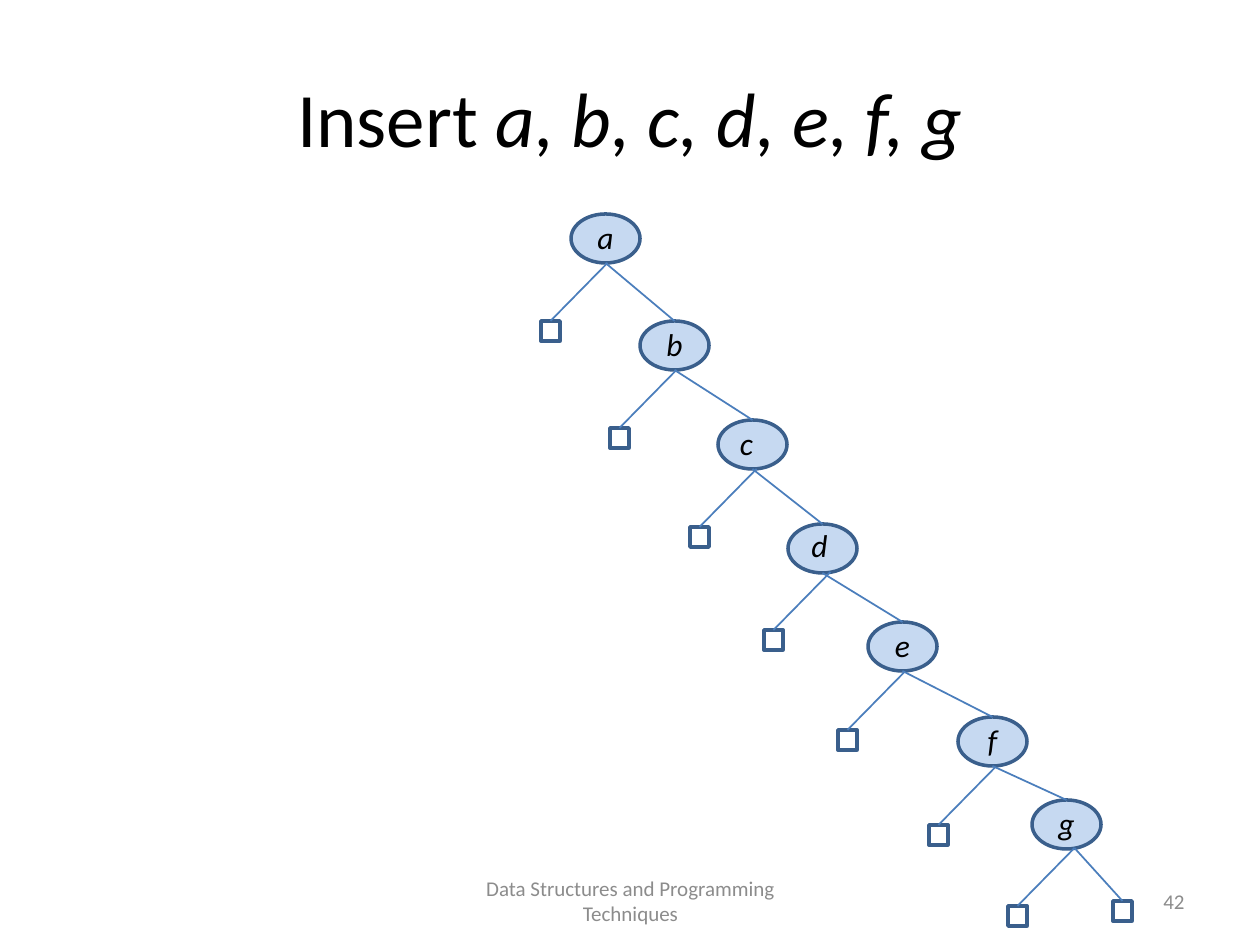
"""Build a slide showing a degenerate binary search tree."""
import pptx
import pptx.util
import pptx.dml.color
import pptx.enum.shapes
import pptx.enum.text
import pptx.oxml.ns
import lxml.etree

SHAPE = pptx.enum.shapes.MSO_SHAPE
ALIGN = pptx.enum.text.PP_ALIGN
ANCHOR = pptx.enum.text.MSO_ANCHOR
SCALE = 914400 / 126

TITLE = [("Insert ", False), ("a, b, c, d, e, f, g", True)]
FOOTER = "Data Structures and Programming Techniques"
NUMBER = "42"
NODES = [
    ("a", 571, 214), ("b", 640, 321), ("c", 718, 420), ("d", 788, 524),
    ("e", 868, 622), ("f", 958, 717), ("g", 1032, 800),
]
NUDGE = {"c": (-6, 0), "d": (-3, -2)}
LEAVES = [
    (541, 321), (610, 428), (690, 527), (764, 630),
    (838, 730), (929, 825), (1008, 906),
]
LAST = (1113, 901)
NODE_W, NODE_H = 69, 49
LEAF_W, LEAF_H = 19, 20
RUN, RISE = 57, 58
EDGE, LINK, FILL = "3A5F8C", "4B7EBC", "C6D9F1"
BLACK, GRAY = "000000", "8C8C8C"


def emu(*sizes):
    return [round(size * SCALE) for size in sizes]


def color(code):
    return pptx.dml.color.RGBColor.from_string(code)


def write(slide, box, runs, size, tint, align=ALIGN.CENTER, anchor=ANCHOR.MIDDLE):
    frame = slide.shapes.add_textbox(*emu(*box)).text_frame
    frame.word_wrap = True
    frame.vertical_anchor = anchor
    para = frame.paragraphs[0]
    para.alignment = align
    for text, slant in runs:
        run = para.add_run()
        run.text = text
        run.font.name = "Calibri"
        run.font.size = pptx.util.Pt(size)
        run.font.italic = slant
        run.font.color.rgb = color(tint)


def draw(slide, kind, box, fill=None):
    shape = slide.shapes.add_shape(kind, *emu(*box))
    shape.shadow.inherit = False
    if fill:
        shape.fill.solid()
        shape.fill.fore_color.rgb = color(fill)
    else:
        shape.fill.background()
    shape.line.color.rgb = color(EDGE)
    shape.line.width = pptx.util.Pt(2)
    return shape


def join(slide, start, child):
    kind = pptx.enum.shapes.MSO_CONNECTOR.STRAIGHT
    line = slide.shapes.add_connector(kind, *emu(*start, *start))
    line.end_connect(child, 0)
    line.line.color.rgb = color(LINK)
    line.line.width = pptx.util.Pt(1)
    props = line._element.spPr
    lxml.etree.SubElement(props, pptx.oxml.ns.qn("a:effectLst"))


def leaf(slide, left, top, start):
    box = draw(slide, SHAPE.RECTANGLE, (left, top, LEAF_W, LEAF_H))
    join(slide, start, box)


def main():
    deck = pptx.Presentation()
    deck.slide_width, deck.slide_height = emu(1260, 945)
    slide = deck.slides.add_slide(deck.slide_layouts[6])
    write(slide, (63, 38, 1134, 157), TITLE, 44, BLACK)

    prior = None
    for name, left, top in NODES:
        node = draw(slide, SHAPE.OVAL, (left, top, NODE_W, NODE_H), FILL)
        if prior:
            join(slide, prior, node)
        prior = (left + NODE_W / 2, top + NODE_H)
        dx, dy = NUDGE.get(name, (0, 0))
        box = (left + dx, top - 2 + dy, NODE_W, 50)
        write(slide, box, [(name, True)], 18, BLACK, anchor=ANCHOR.TOP)

    for left, top in LEAVES:
        start = (left + LEAF_W / 2 + RUN, top - RISE)
        leaf(slide, left, top, start)
    leaf(slide, *LAST, start)

    write(slide, (431, 876, 399, 50), [(FOOTER, False)], 12, GRAY)
    write(slide, (903, 876, 294, 50), [(NUMBER, False)], 12, GRAY, ALIGN.RIGHT)
    deck.save("out.pptx")


if __name__ == "__main__":
    main()
